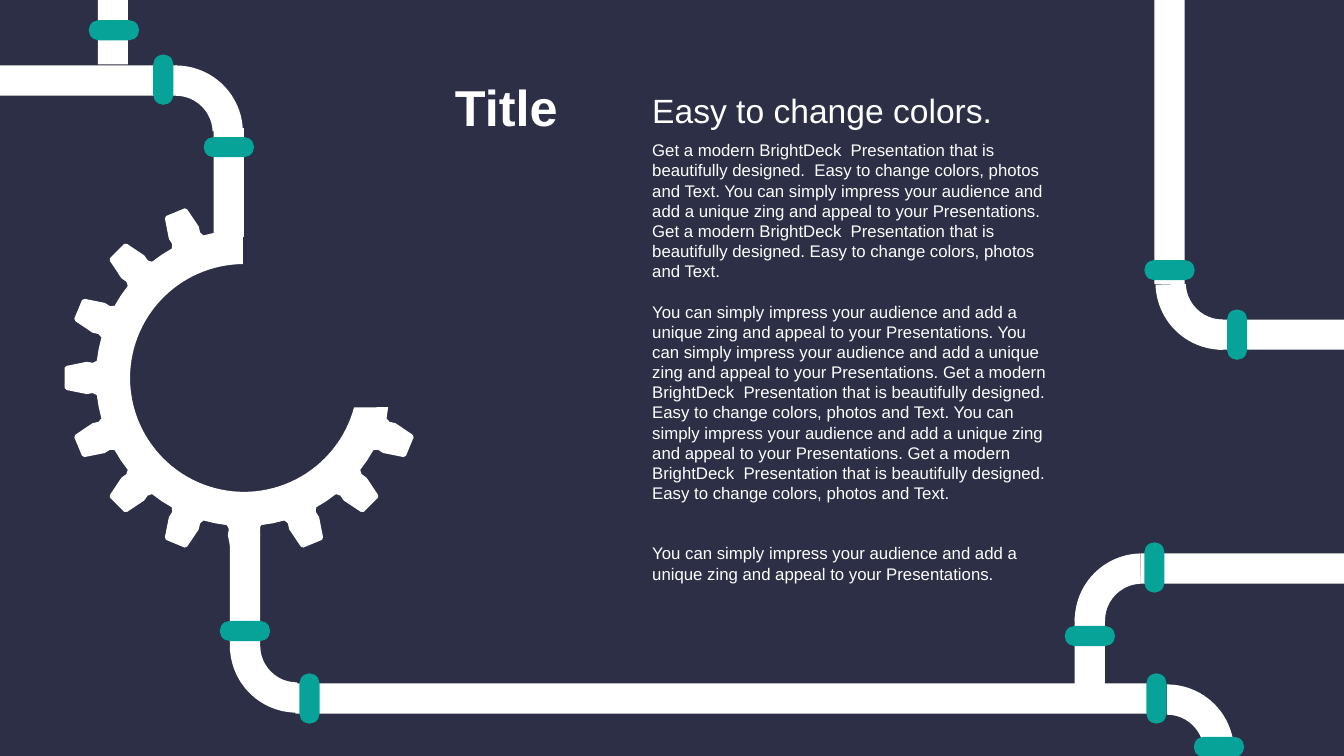
from math import cos, hypot, radians, sin, atan2

from pptx import Presentation
from pptx.dml.color import RGBColor as Rgb
from pptx.enum.shapes import MSO_SHAPE as Kind
from pptx.enum.text import MSO_AUTO_SIZE as Auto, PP_ALIGN as Align
from pptx.util import Pt

PX = 9144
COLORS = {"navy": "2C2F45", "white": "FFFFFF", "teal": "07A398"}

# left, top, width, height
PIPES = [
    (97, 0, 30, 64), (0, 65, 176, 30), (212, 127, 30, 108),
    (1131, 549, 202, 30), (1066, 612, 30, 71),
    (293, 678, 853, 30), (228, 519, 30, 127),
    (1145, 0, 30, 282), (1208, 317, 125, 30),
]
# left, top, rotation
ELBOWS = [(108, 65, 0), (1066, 549, 270), (228, 574, 180),
          (1091, 679, 0), (1146, 214, 180)]
# centre of each joint
WIDE = [(113, 30), (227, 146), (1081, 631), (243, 626), (1209, 741), (1160, 268)]
TALL = [(162, 79), (1145, 563), (307, 693), (1147, 693), (1227, 332)]

HUB = (242, 375)
INNER, OUTER = 113, 147
STEP = 22.5
# radius and sideways offset along one tooth
TOOTH = [(146, -17), (150, -15), (156, -16), (176, -12), (178, -10),
         (178, 10), (176, 12), (156, 16), (150, 15), (146, 17)]

TITLE = "Title"
HEAD = "Easy to change colors."
IMPRESS = ("You can simply impress your audience and add a unique zing "
           "and appeal to your Presentations.")
MODERN = "Get a modern BrightDeck  Presentation that is beautifully designed."
EASY = "Easy to change colors, photos and Text."
# text and blank lines above it
BODY = [
    (f"{MODERN}  {EASY} {IMPRESS} {MODERN} {EASY}", 0),
    (f"{IMPRESS} {IMPRESS} {MODERN} {EASY} {IMPRESS} {MODERN} {EASY}", 1),
    (IMPRESS, 2),
]


def rgb(name):
    return Rgb.from_string(COLORS[name])


def paint(shape, color):
    shape.shadow.inherit = False
    shape.fill.solid()
    shape.fill.fore_color.rgb = rgb(color)
    shape.line.fill.background()


def block(slide, kind, box, color, adjust=(), turn=0):
    shape = slide.shapes.add_shape(kind, *(n * PX for n in box))
    for i, value in enumerate(adjust):
        shape.adjustments[i] = value
    shape.rotation = turn
    paint(shape, color)


def joint(slide, mid, size):
    (x, y), (w, h) = mid, size
    box = (x - w // 2, y - h // 2, w, h)
    block(slide, Kind.ROUNDED_RECTANGLE, box, "teal", [0.5])


def polar(radius, angle, side=0):
    """Point at an angle clockwise from the right, moved sideways."""
    turn = radians(angle)
    return (HUB[0] + radius * cos(turn) - side * sin(turn),
            HUB[1] + radius * sin(turn) + side * cos(turn))


def gear(slide):
    """Three-quarter gear ring, open at the upper right."""
    points = [(241, 198), (241, 262)]
    points += [polar(INNER, a) for a in range(267, 14, -3)]
    points.append((385, 404))
    for n in range(1, 12):
        angle = n * STEP
        points += [polar(r, angle, side) for r, side in TOOTH]
        points.append(polar(OUTER, angle + STEP / 2))
    points += [polar(r, 270, side) for r, side in TOOTH[:5]]
    first, *rest = [(round(x * PX), round(y * PX)) for x, y in points]
    pen = slide.shapes.build_freeform(*first, scale=1.0)
    pen.add_line_segments(rest, close=True)
    paint(pen.convert_to_shape(), "white")


def write(slide, box, parts, size, bold=False, align=Align.LEFT):
    frame = slide.shapes.add_textbox(*(n * PX for n in box)).text_frame
    frame.word_wrap = True
    frame.auto_size = Auto.SHAPE_TO_FIT_TEXT
    line = 1.2 * size
    for i, (text, gap) in enumerate(parts):
        para = frame.paragraphs[0] if i == 0 else frame.add_paragraph()
        look = {"alignment": align, "line_spacing": Pt(line),
                "space_before": Pt(gap * line)}
        for key, value in look.items():
            setattr(para, key, value)
        run = para.add_run()
        run.text = text
        font = {"name": "Arial", "size": Pt(size), "bold": bold}
        for key, value in font.items():
            setattr(run.font, key, value)
        run.font.color.rgb = rgb("white")


def main():
    deck = Presentation()
    deck.slide_width, deck.slide_height = 1333 * PX, 750 * PX
    slide = deck.slides.add_slide(deck.slide_layouts[6])
    slide.background.fill.solid()
    slide.background.fill.fore_color.rgb = rgb("navy")

    gear(slide)
    for box in PIPES:
        block(slide, Kind.RECTANGLE, box, "white")
    for x, y, turn in ELBOWS:
        block(slide, Kind.BLOCK_ARC, (x, y, 133, 133), "white",
              [161.89, 215.02, 0.226], turn)
    for mid in WIDE:
        joint(slide, mid, (50, 20))
    for mid in TALL:
        joint(slide, mid, (20, 50))

    write(slide, (637, 134, 422, 454), BODY, 12)
    write(slide, (637, 84, 422, 50), [(HEAD, 0)], 24)
    write(slide, (227, 71, 336, 71), [(TITLE, 0)], 36, True, Align.RIGHT)
    deck.save("out.pptx")


if __name__ == "__main__":
    main()
